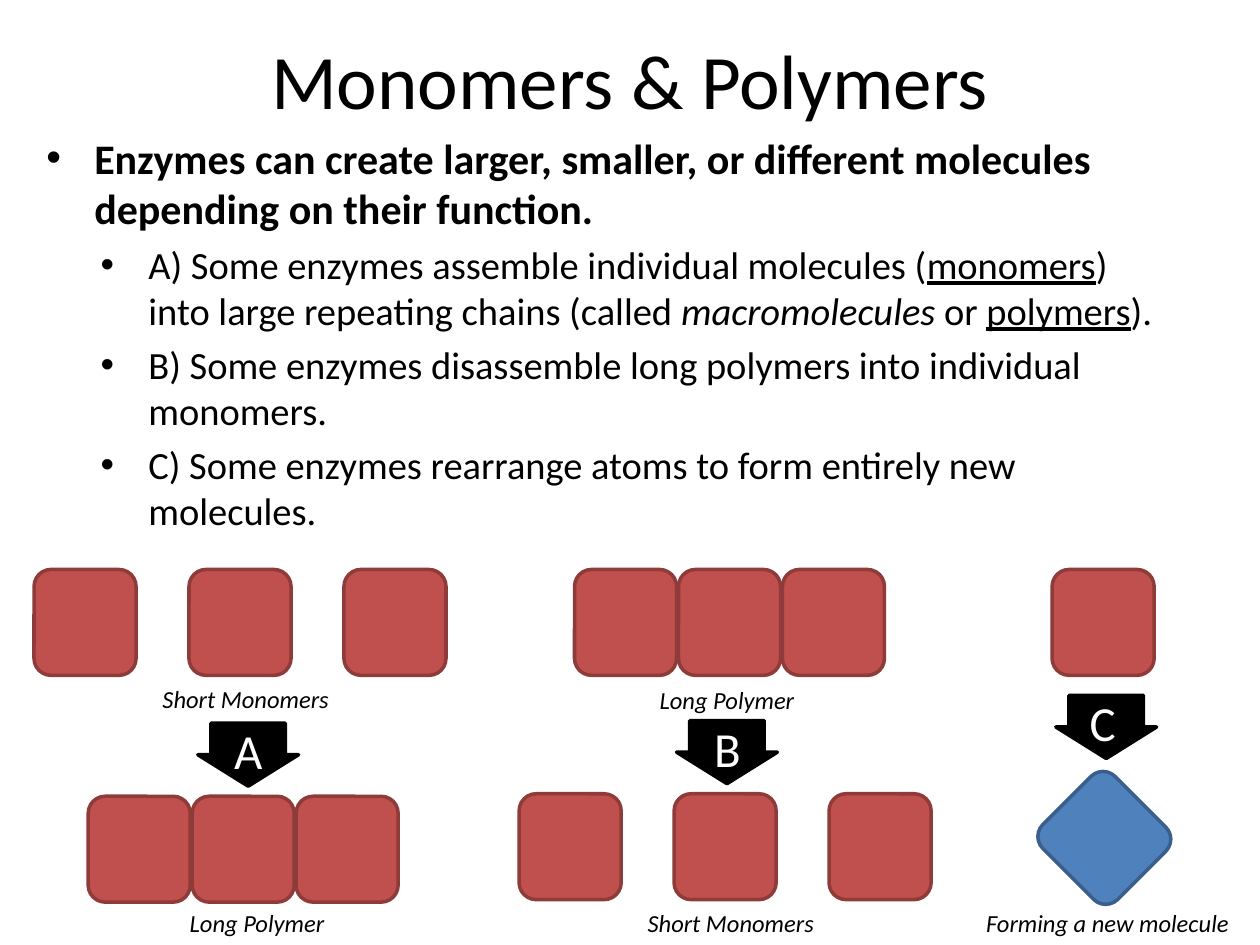
from lxml import etree
from pptx import Presentation
from pptx.dml.color import RGBColor
from pptx.enum.shapes import MSO_SHAPE as SHAPE
from pptx.enum.text import MSO_ANCHOR as ANCHOR, PP_ALIGN as ALIGN
from pptx.oxml.ns import qn
from pptx.util import Inches, Pt

COLORS = {
    "black": "000000", "white": "FFFFFF",
    "red": "C0504D", "red_line": "8E3B39",
    "blue": "4F81BD", "blue_line": "3A5F8C",
}

prs = Presentation()
prs.slide_width, prs.slide_height = Inches(10), Inches(7.5)
s = prs.slides.add_slide(prs.slide_layouts[6])


def add_text(x, y, w, h, text, size, color="black", italic=False,
             align=ALIGN.CENTER, wrap=True):
    box = s.shapes.add_textbox(Inches(x), Inches(y), Inches(w), Inches(h))
    tf = box.text_frame
    tf.word_wrap = wrap
    p = tf.paragraphs[0]
    p.text = text
    p.alignment = align
    for r in p.runs:
        r.font.name, r.font.size, r.font.italic = "Calibri", Pt(size), italic
        r.font.color.rgb = RGBColor.from_string(COLORS[color])
    return tf


def add_figure(kind, x, y, w, h, fill, line):
    sp = s.shapes.add_shape(kind, Inches(x), Inches(y), Inches(w), Inches(h))
    sp.shadow.inherit = False
    sp.fill.solid()
    sp.fill.fore_color.rgb = RGBColor.from_string(COLORS[fill])
    sp.line.color.rgb = RGBColor.from_string(COLORS[line])
    sp.line.width = Pt(2)
    return sp


# Title
title = add_text(0.5, 0, 9, 1.25, "Monomers & Polymers", 44)
title.vertical_anchor = ANCHOR.MIDDLE

# Bulleted text: (left indent, size, [(text, style)])
bullets = [
    (0.38, 24, [("Enzymes can create larger, smaller, or different molecules "
                 "depending on their function.", "bold")]),
    (0.81, 22, [("A) Some enzymes assemble individual molecules (", None),
                ("monomers", "underline"),
                (") into large repeating chains (called ", None),
                ("macromolecules", "italic"), (" or ", None),
                ("polymers", "underline"), (").", None)]),
    (0.81, 22, [("B) Some enzymes disassemble long polymers into individual "
                 "monomers.", None)]),
    (0.81, 22, [("C) Some enzymes rearrange atoms to form entirely new "
                 "molecules.", None)]),
]
body = s.shapes.add_textbox(Inches(0.27), Inches(1), Inches(9.06), Inches(5.75))
tf = body.text_frame
tf.word_wrap = True
for i, (indent, size, runs) in enumerate(bullets):
    p = tf.add_paragraph() if i else tf.paragraphs[0]
    p.level = min(i, 1)
    pPr = p._p.get_or_add_pPr()
    pPr.set("marL", str(Inches(indent)))
    pPr.set("indent", str(Inches(-0.38)))
    etree.SubElement(pPr, qn("a:buFont")).set("typeface", "Arial")
    etree.SubElement(pPr, qn("a:buChar")).set("char", "•")
    p.space_before = Pt(size * 0.2 if i else 0)
    for text, style in runs:
        r = p.add_run()
        r.text = text
        r.font.name, r.font.size = "Calibri", Pt(size)
        r.font.color.rgb = RGBColor.from_string(COLORS["black"])
        r.font.bold = style == "bold"
        r.font.italic = style == "italic"
        r.font.underline = style == "underline"

# Monomer squares: apart or joined, as (left, top, pitch, count)
APART, JOINED = 1.23, 0.825
for left, top, pitch, count in [
    (0.27, 4.52, APART, 3), (0.7, 6.32, JOINED, 3),
    (4.56, 4.52, JOINED, 3), (4.12, 6.3, APART, 3),
    (8.35, 4.52, APART, 1),
]:
    for i in range(count):
        add_figure(SHAPE.ROUNDED_RECTANGLE, left + i * pitch, top, 0.81, 0.84,
                   "red", "red_line")

# New molecule
diamond = add_figure(SHAPE.ROUNDED_RECTANGLE, 8.36, 6.23, 0.81, 0.84,
                     "blue", "blue_line")
diamond.rotation = 315

# Lettered arrows
for letter, x, y, letter_x in [("A", 1.57, 5.74, 1.76), ("B", 5.37, 5.72, 5.57),
                               ("C", 8.38, 5.52, 8.55)]:
    arrow = add_figure(SHAPE.DOWN_ARROW, x, y, 0.8, 0.5, "black", "black")
    arrow.adjustments[0] = 0.74
    arrow.adjustments[1] = 0.5
    add_text(letter_x, y - 0.07, 0.42, 0.57, letter, 28, "white",
             align=ALIGN.LEFT, wrap=False)

# Captions
for text, x, y, w in [
    ("Short Monomers", 1.14, 5.38, 1.62), ("Long Polymer", 1.23, 7.16, 1.62),
    ("Long Polymer", 4.96, 5.39, 1.62), ("Short Monomers", 4.99, 7.16, 1.62),
    ("Forming a new molecule", 7.64, 7.16, 2.3),
]:
    add_text(x, y, w, 0.34, text, 14, italic=True)

prs.save("out.pptx")
